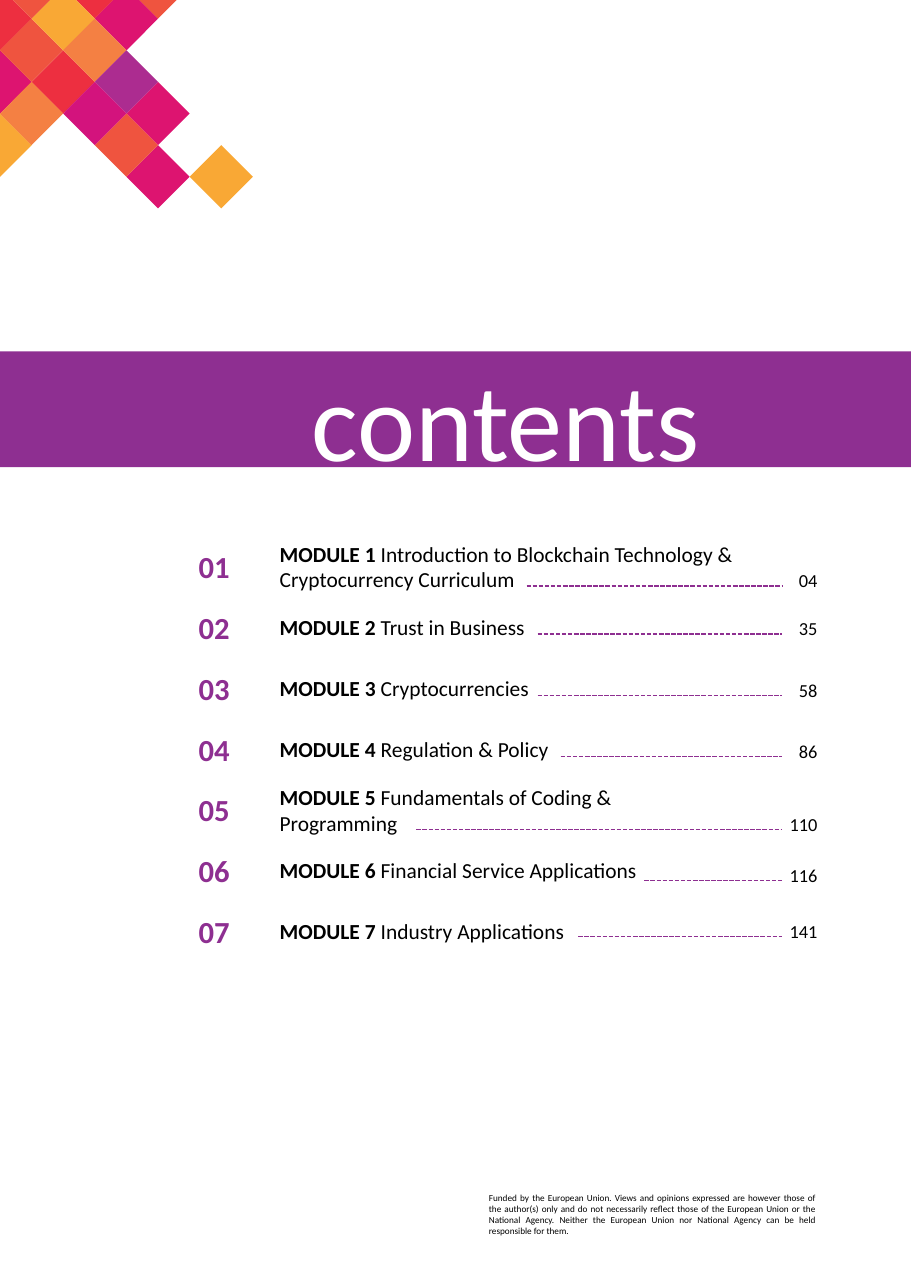
from lxml import etree
from pptx import Presentation
from pptx.dml.color import RGBColor
from pptx.enum.dml import MSO_LINE
from pptx.enum.shapes import MSO_CONNECTOR, MSO_SHAPE
from pptx.enum.text import MSO_ANCHOR, MSO_AUTO_SIZE, PP_ALIGN
from pptx.oxml.ns import qn
from pptx.util import Inches, Pt

LEFT, CENTER, RIGHT, JUSTIFY = (PP_ALIGN.LEFT, PP_ALIGN.CENTER,
                                PP_ALIGN.RIGHT, PP_ALIGN.JUSTIFY)
TOP, MIDDLE = MSO_ANCHOR.TOP, MSO_ANCHOR.MIDDLE
RECT, STRAIGHT, DASH = MSO_SHAPE.RECTANGLE, MSO_CONNECTOR.STRAIGHT, MSO_LINE.SQUARE_DOT

# Content
TITLE = "contents"
# (topic, page, width of the topic box, drop of the page number, leader start)
MODULES = [
    ("Introduction to Blockchain Technology & Cryptocurrency Curriculum",
     "04", 4.35, 0.13, 4.78),
    ("Trust in Business", "35", 3.88, 0.01, 4.88),
    ("Cryptocurrencies", "58", 3.88, 0.02, 4.88),
    ("Regulation & Policy", "86", 3.88, 0.02, 5.09),
    ("Fundamentals of Coding & Programming", "110", 3.88, 0.13, 3.78),
    ("Financial Service Applications", "116", 3.88, 0.04, 5.85),
    ("Industry Applications", "141", 3.88, 0.0, 5.25),
]
DISCLAIMER = (
    "Funded by the European Union. Views and opinions expressed are however "
    "those of the author(s) only and do not necessarily reflect those of the "
    "European Union or the National Agency. Neither the European Union nor "
    "National Agency can be held responsible for them.")
COLORS = {
    "purple": "8E2F91", "white": "FFFFFF", "black": "000000",
    "red": "ED2F40", "pink": "DD1470", "coral": "EF543F", "amber": "F9A835",
    "orange": "F48043", "violet": "AC2C90", "magenta": "D3137D",
}
# Mosaic tiles: colour -> (column, row) of each diamond's centre
MOSAIC = {
    "red": [(3, -1), (2, 2), (0, 0)],
    "pink": [(4, 0), (0, 2), (5, 5), (5, 3)],
    "coral": [(5, -1), (1, 1), (4, 4), (1, -1)],
    "amber": [(2, 0), (0, 4), (7, 5)],
    "orange": [(3, 1), (1, 3)],
    "violet": [(4, 2)],
    "magenta": [(3, 3)],
}

# Grid, in inches
WIDTH, HEIGHT = 8.27, 11.69
BAND_TOP, BAND_H = 3.19, 1.05
ROW_TOP, ROW_PITCH, ROW_H = 4.95, 0.552, 0.38
NUMBER_X, NUMBER_W = 1.59, 0.71
TOPIC_X = 2.44
PAGE_X, PAGE_W = 7.02, 0.5
LEADER_END, LEADER_DROP = 7.1, 0.24
TILE, MOSAIC_TOP = 0.287, 0.17

prs = Presentation()
prs.slide_width, prs.slide_height = Inches(WIDTH), Inches(HEIGHT)
slide = prs.slides.add_slide(prs.slide_layouts[5])
shapes = slide.shapes


def rgb(name):
    return RGBColor.from_string(COLORS[name])


def paint(sp, color):
    sp.shadow.inherit = False
    sp.fill.solid()
    sp.fill.fore_color.rgb = rgb(color)
    sp.line.fill.background()


def write(runs, box, size, color="black", align=LEFT, anchor=MIDDLE, sp=None):
    """Put (text, bold) runs in a new text box, or in the given shape."""
    sp = sp or shapes.add_textbox(0, 0, 0, 0)
    sp.left, sp.top, sp.width, sp.height = map(Inches, box)
    tf = sp.text_frame
    tf.word_wrap, tf.auto_size = True, MSO_AUTO_SIZE.NONE
    tf.vertical_anchor = anchor
    p = tf.paragraphs[0]
    p.alignment = align
    for text, bold in runs:
        r = p.add_run()
        r.text = text
        r.font.name, r.font.size, r.font.bold = "Calibri", Pt(size), bold
        r.font.color.rgb = rgb(color)


def clip(points, axis):
    """Cut away the part of an outline that lies beyond a slide edge."""
    kept = []
    for a, b in zip(points, points[1:] + points[:1]):
        if a[axis] >= 0:
            kept.append(a)
        if a[axis] * b[axis] < 0:
            t = a[axis] / (a[axis] - b[axis])
            kept.append(tuple(m + t * (n - m) for m, n in zip(a, b)))
    return kept


def add_tile(col, row, color):
    x, y = col * TILE, MOSAIC_TOP + row * TILE
    diamond = [(x, y - TILE), (x + TILE, y), (x, y + TILE), (x - TILE, y)]
    outline = [(Inches(px), Inches(py)) for px, py in clip(clip(diamond, 0), 1)]
    builder = shapes.build_freeform(*outline[0])
    builder.add_line_segments(outline[1:], close=True)
    paint(builder.convert_to_shape(), color)


def add_leader(x, y):
    line = shapes.add_connector(STRAIGHT, Inches(x), Inches(y),
                                Inches(LEADER_END), Inches(y))
    line.line.color.rgb = rgb("purple")
    line.line.width, line.line.dash_style = Pt(1), DASH
    etree.SubElement(line._element.spPr, qn("a:effectLst"))


# Mosaic
for color, cells in MOSAIC.items():
    for col, row in cells:
        add_tile(col, row, color)

# Title band, with the title brought in front of it
band = shapes.add_shape(RECT, 0, Inches(BAND_TOP), prs.slide_width, Inches(BAND_H))
paint(band, "purple")
title = shapes.title
shapes._spTree.append(title._element)
write([(TITLE, False)], (2.73, 3.14, 5.1, 1.54), 72, "white", anchor=TOP, sp=title)

# Module list
for i, (topic, page, topic_w, drop, leader_x) in enumerate(MODULES):
    y = ROW_TOP + i * ROW_PITCH
    write([(f"{i + 1:02d}", True)], (NUMBER_X, y, NUMBER_W, ROW_H), 20,
          "purple", CENTER)
    write([(f"MODULE {i + 1} ", True), (topic, False)],
          (TOPIC_X, y, topic_w, ROW_H), 14)
    write([(page, False)], (PAGE_X, y + drop, PAGE_W, ROW_H), 12, align=RIGHT)
    add_leader(leader_x, y + drop + LEADER_DROP)

# Disclaimer
write([(DISCLAIMER, False)], (4.34, 10.77, 3.16, 0.5), 6, align=JUSTIFY, anchor=TOP)

prs.save("out.pptx")
